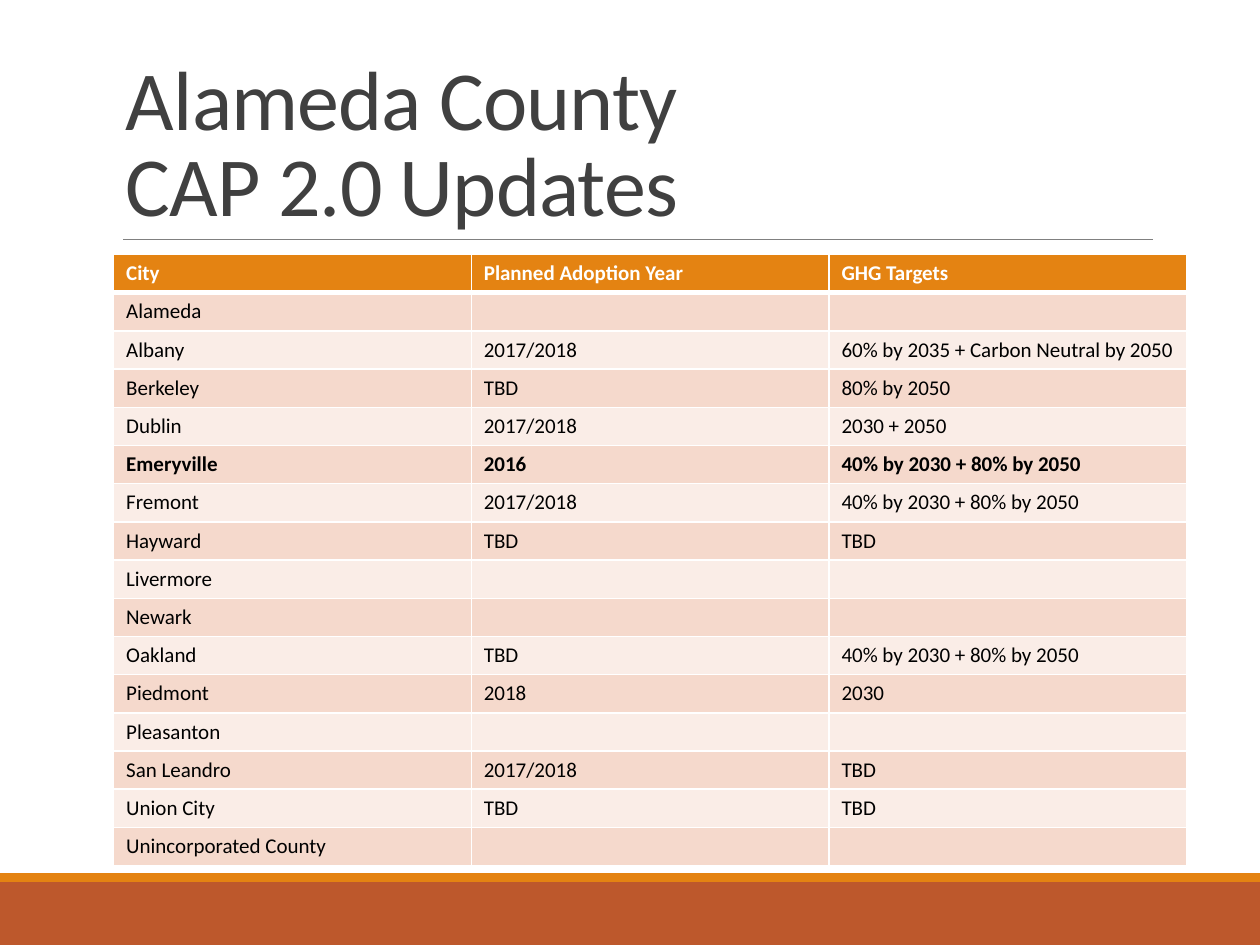
"""Build the Alameda County climate action plan update slide."""
from dataclasses import dataclass

from lxml.etree import SubElement as Sub
from pptx import Presentation
from pptx.dml.color import RGBColor as RGB
from pptx.enum.shapes import MSO_CONNECTOR as CONN, MSO_SHAPE as SHAPE
from pptx.enum.text import MSO_ANCHOR as ANCHOR
from pptx.oxml.ns import qn
from pptx.util import Cm, Pt

ROWS = [
    ("City", "Planned Adoption Year", "GHG Targets"),
    ("Alameda", "", ""),
    ("Albany", "2017/2018", "60% by 2035 + Carbon Neutral by 2050"),
    ("Berkeley", "TBD", "80% by 2050"),
    ("Dublin", "2017/2018", "2030 + 2050"),
    ("Emeryville", "2016", "40% by 2030 + 80% by 2050"),
    ("Fremont", "2017/2018", "40% by 2030 + 80% by 2050"),
    ("Hayward", "TBD", "TBD"),
    ("Livermore", "", ""),
    ("Newark", "", ""),
    ("Oakland", "TBD", "40% by 2030 + 80% by 2050"),
    ("Piedmont", "2018", "2030"),
    ("Pleasanton", "", ""),
    ("San Leandro", "2017/2018", "TBD"),
    ("Union City", "TBD", "TBD"),
    ("Unincorporated County", "", ""),
]
BOLD_ROWS = (0, 5)


@dataclass(frozen=True)
class Theme:
    font: str = "Calibri"
    title_size: int = 48
    cell_size: int = 12
    title: str = "404040"
    text: str = "000000"
    white: str = "FFFFFF"
    rule: str = "808080"
    accent: str = "E48312"
    footer: str = "BD582C"
    bands: tuple = ("FAEDE7", "F5D9CC")


def assign(obj, **values):
    for name, value in values.items():
        setattr(obj, name, value)


class Deck:
    def __init__(self, theme):
        self.theme = theme
        self.prs = Presentation()
        assign(self.prs, slide_width=Cm(25.4), slide_height=Cm(19.05))
        self.s = self.prs.slides.add_slide(self.prs.slide_layouts[6])

    def style(self, font, size, color, bold=False):
        assign(font, name=self.theme.font, size=Pt(size), bold=bold)
        font.color.rgb = RGB.from_string(color)

    def bar(self, top, height, color):
        sp = self.s.shapes.add_shape(SHAPE.RECTANGLE, 0, Cm(top), self.prs.slide_width, Cm(height))
        sp.shadow.inherit = False
        sp.fill.solid()
        sp.fill.fore_color.rgb = RGB.from_string(color)
        sp.line.fill.background()

    def rule(self, left, right, y):
        ln = self.s.shapes.add_connector(CONN.STRAIGHT, Cm(left), Cm(y), Cm(right), Cm(y))
        ln.line.color.rgb = RGB.from_string(self.theme.rule)
        ln.line.width = Pt(0.5)
        Sub(ln._element.spPr, qn("a:effectLst"))

    def title(self, lines, left, top, width, height):
        tf = self.s.shapes.add_textbox(Cm(left), Cm(top), Cm(width), Cm(height)).text_frame
        assign(tf, word_wrap=True, vertical_anchor=ANCHOR.BOTTOM)
        p = tf.paragraphs[0]
        p.line_spacing = 0.85
        p.text = "\v".join(lines)
        for r in p.runs:
            self.style(r.font, self.theme.title_size, self.theme.title)
            r._r.get_or_add_rPr().set("spc", "-50")

    def borders(self, cell, **widths):
        pr = cell._tc.get_or_add_tcPr()
        for side in "LRTB":
            ln = Sub(pr, qn(f"a:ln{side}"), w=str(Pt(widths.get(side, 1))))
            Sub(Sub(ln, qn("a:solidFill")), qn("a:srgbClr"), val=self.theme.white)

    def cell(self, cell, text, fill, color, bold):
        cell.fill.solid()
        cell.fill.fore_color.rgb = RGB.from_string(fill)
        p = cell.text_frame.paragraphs[0]
        if text:
            r = p.add_run()
            r.text = text
            self.style(r.font, self.theme.cell_size, color, bold)
        else:
            Sub(p._p, qn("a:endParaRPr"), sz=str(self.theme.cell_size * 100))

    def table(self, rows, left, top, col_width, row_height):
        t, cols = self.theme, len(rows[0])
        tbl = self.s.shapes.add_table(len(rows), cols, Cm(left), Cm(top),
                                      Cm(col_width * cols), Cm(row_height * len(rows))).table
        for col in tbl.columns:
            col.width = Cm(col_width)
        for i, row in enumerate(rows):
            tbl.rows[i].height = Cm(row_height)
            fill, color = (t.bands[i % 2], t.text) if i else (t.accent, t.white)
            edge = {0: {"B": 3}, 1: {"T": 3}}.get(i, {})
            for j, text in enumerate(row):
                self.borders(tbl.cell(i, j), **edge)
                self.cell(tbl.cell(i, j), text, fill, color, i in BOLD_ROWS)


def main():
    deck = Deck(Theme())
    deck.bar(17.78, 1.27, deck.theme.footer)
    deck.bar(17.6, 0.18, deck.theme.accent)
    deck.rule(2.48, 23.24, 4.82)
    deck.title(("Alameda County ", "CAP 2.0 Updates"), 2.29, 0.79, 20.96, 4.04)
    deck.table(ROWS, 2.29, 5.13, 7.21, 0.77)
    deck.prs.save("out.pptx")


if __name__ == "__main__":
    main()
